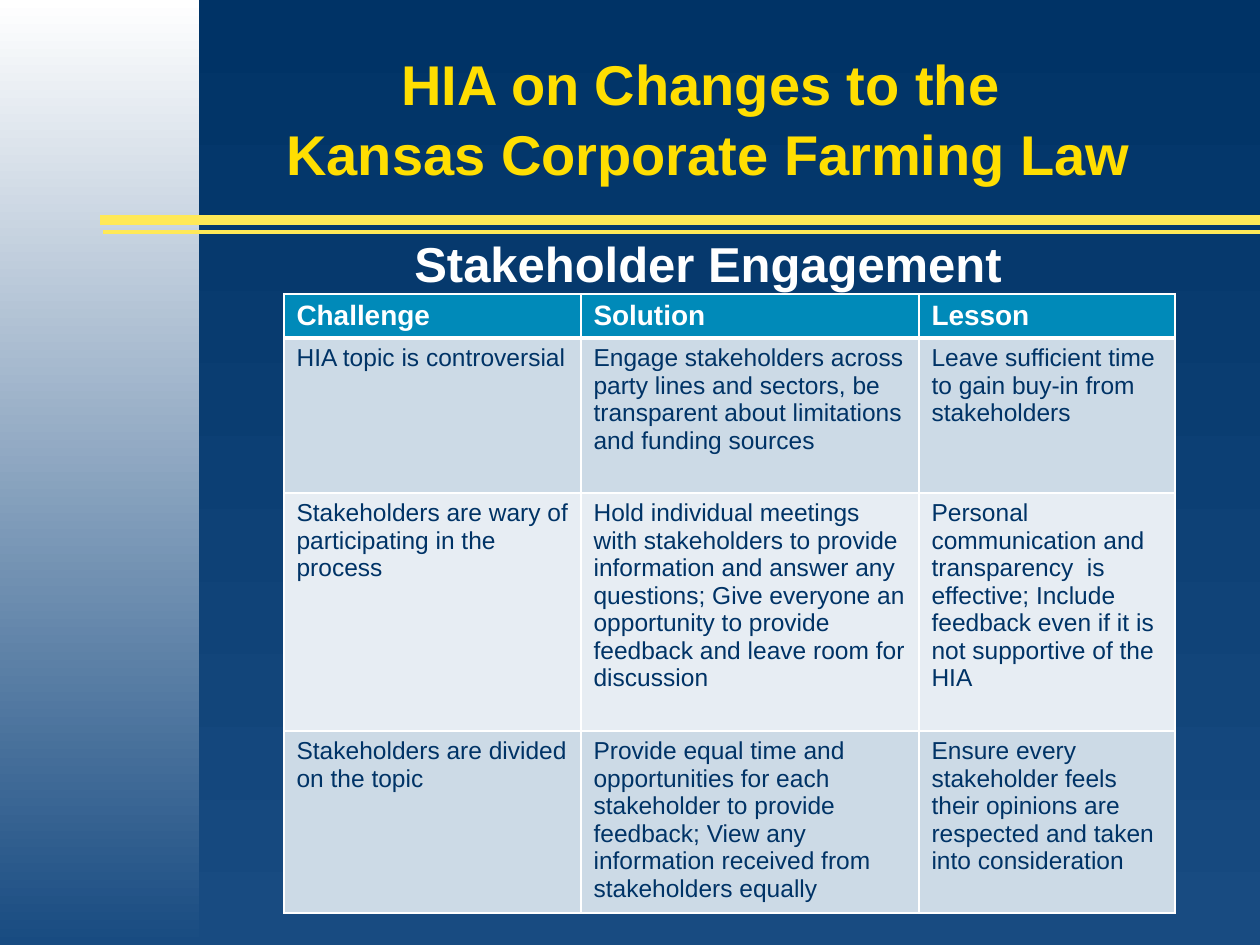
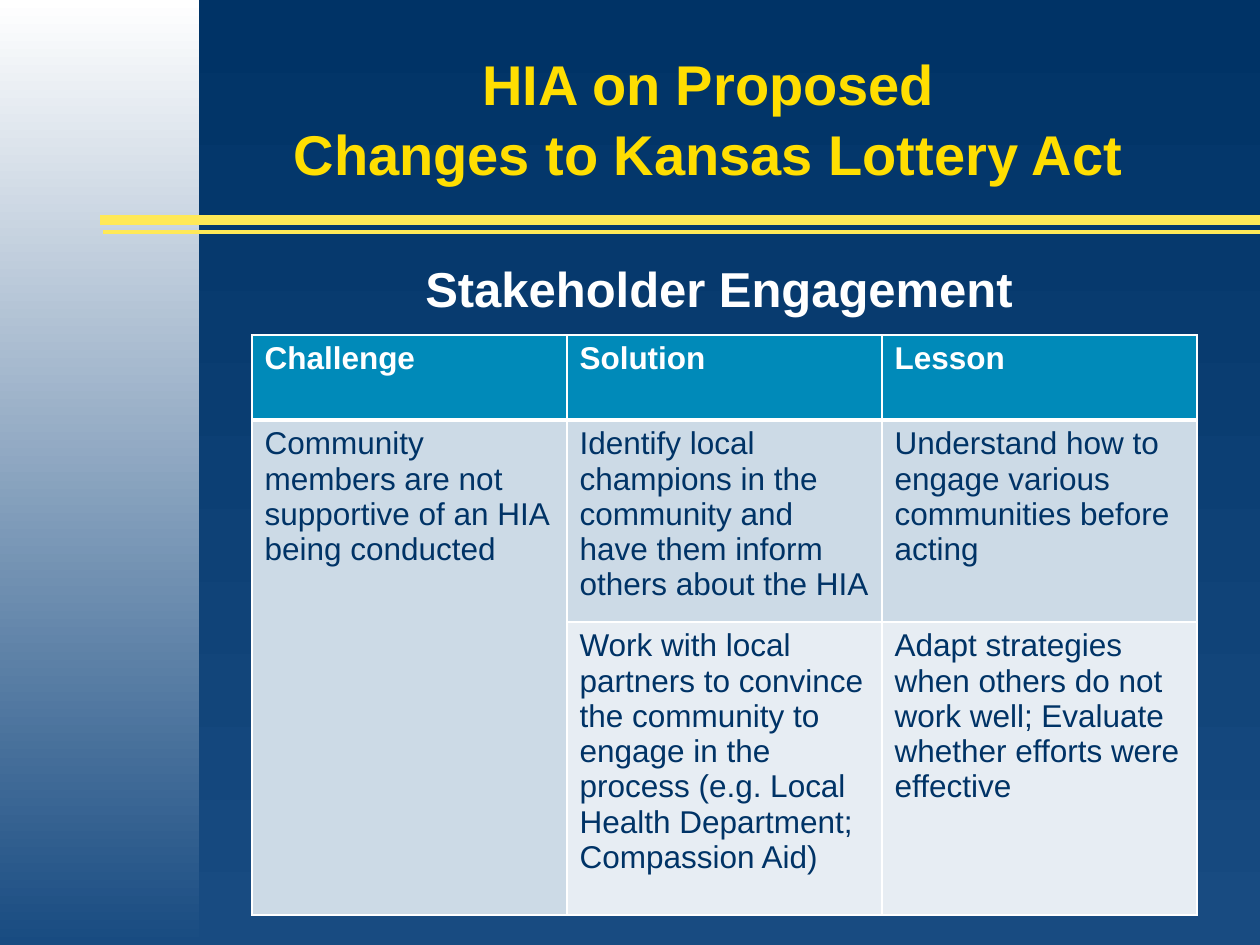
from dataclasses import dataclass

from lxml.etree import SubElement
from pptx import Presentation
from pptx.dml.color import RGBColor as Rgb
from pptx.enum.shapes import MSO_CONNECTOR as Link, MSO_SHAPE as Shape
from pptx.enum.text import MSO_ANCHOR as Anchor, MSO_AUTO_SIZE as Fit, PP_ALIGN as Align
from pptx.oxml.ns import qn
from pptx.util import Emu, Pt

WIDE, HIGH = 1260, 945
SCALE = 914400 / 126  # EMU in one px


@dataclass(frozen=True)
class Theme:
    font: str = "Arial"
    navy: str = "003366"
    blue: str = "184B81"
    white: str = "FFFFFF"
    gold: str = "FFDE01"
    rule: str = "FFE957"
    head: str = "008AB9"
    bands: tuple[str, str] = ("CCDAE6", "E7EDF3")
    title: int = 32
    label: int = 28
    grid: float = 1
    thick: float = 3


@dataclass(frozen=True)
class Box:
    left: int
    top: int
    width: int
    height: int

    def emu(self) -> tuple[Emu, ...]:
        return tuple(map(px, (self.left, self.top, self.width, self.height)))


@dataclass(frozen=True)
class Rule:
    y: int
    weight: float


@dataclass(frozen=True)
class Grid:
    left: int
    top: int
    cols: tuple[int, ...]
    rows: tuple[int, ...]
    head: int
    body: int
    cells: tuple[tuple[str, ...], ...]
    spans: tuple[tuple[int, int, int, int], ...] = ()


@dataclass(frozen=True)
class Page:
    title: tuple[str, ...]
    label: Box
    grid: Grid


THEME = Theme()
SIDE = Box(0, 0, 199, HIGH)
TITLE = Box(170, 25, 1077, 168)
RULES = (Rule(232, 2), Rule(220, 6))
RULE_LEFT = 105
LABEL = "Stakeholder Engagement"
HEADS = ("Challenge", "Solution", "Lesson")

PAGES = (
    Page(
        ("HIA on Changes to the ", "Kansas Corporate Farming Law"),
        Box(262, 227, 892, 72),
        Grid(
            284, 294, (297, 338, 256), (44, 155, 238, 182), 16, 14,
            (
                HEADS,
                (
                    "HIA topic is controversial",
                    "Engage stakeholders across party lines and sectors, be "
                    "transparent about limitations and funding sources",
                    "Leave sufficient time to gain buy-in from stakeholders",
                ),
                (
                    "Stakeholders are wary of participating in the process",
                    "Hold individual meetings with stakeholders to provide "
                    "information and answer any questions; Give everyone an "
                    "opportunity to provide feedback and leave room for discussion",
                    "Personal communication and transparency  is effective; "
                    "Include feedback even if it is not supportive of the HIA",
                ),
                (
                    "Stakeholders are divided on the topic",
                    "Provide equal time and opportunities for each stakeholder to "
                    "provide feedback; View any information received from "
                    "stakeholders equally",
                    "Ensure every stakeholder feels their opinions are respected "
                    "and taken into consideration",
                ),
            ),
        ),
    ),
    Page(
        ("HIA on Proposed", "Changes to Kansas Lottery Act"),
        Box(273, 252, 892, 72),
        Grid(
            252, 335, (315, 315, 315), (85, 202, 293), 18, 18,
            (
                HEADS,
                (
                    "Community members are not supportive of an HIA being conducted",
                    "Identify local champions in the community and have them "
                    "inform others about the HIA",
                    "Understand how to engage various communities before acting",
                ),
                (
                    "",
                    "Work with local partners to convince the community to engage "
                    "in the process (e.g. Local Health Department; Compassion Aid)",
                    "Adapt strategies when others do not work well; Evaluate "
                    "whether efforts were effective",
                ),
            ),
            ((1, 0, 2, 0),),
        ),
    ),
)


def px(count: int) -> Emu:
    return Emu(round(count * SCALE))


def tint(text: str) -> Rgb:
    return Rgb.from_string(text)


def fade(fill, top: str, base: str) -> None:
    """Fill with a gradient that runs straight down."""
    fill.gradient()
    fill.gradient_angle = 270
    for stop, tone in zip(fill.gradient_stops, (top, base)):
        stop.color.rgb = tint(tone)


def write(para, text: str, size: int, tone: str, bold: bool = True) -> None:
    run = para.add_run()
    run.text = text
    font = run.font
    font.name, font.size, font.bold = THEME.font, Pt(size), bold
    font.color.rgb = tint(tone)


def draw_side(slide) -> None:
    side = slide.shapes.add_shape(Shape.RECTANGLE, *SIDE.emu())
    side.shadow.inherit = False
    side.line.fill.background()
    fade(side.fill, THEME.white, THEME.blue)


def draw_rule(slide, rule: Rule) -> None:
    ends = map(px, (RULE_LEFT, rule.y, WIDE, rule.y))
    link = slide.shapes.add_connector(Link.STRAIGHT, *ends)
    link.line.width = Pt(rule.weight)
    link.line.color.rgb = tint(THEME.rule)
    link.line._get_or_add_ln().set("cap", "sq")
    SubElement(link._element.spPr, qn("a:effectLst"))


def draw_title(slide, lines: tuple[str, ...]) -> None:
    title = slide.shapes.title
    title.left, title.top, title.width, title.height = TITLE.emu()
    frame = title.text_frame
    frame.auto_size, frame.vertical_anchor = Fit.NONE, Anchor.BOTTOM
    for i, line in enumerate(lines):
        para = frame.add_paragraph() if i else frame.paragraphs[0]
        para.alignment = Align.CENTER
        if i:
            para.space_before = Pt(1.5)
        write(para, line, THEME.title, THEME.gold)


def draw_label(slide, box: Box) -> None:
    frame = slide.shapes.add_textbox(*box.emu()).text_frame
    frame.word_wrap, frame.auto_size = True, Fit.SHAPE_TO_FIT_TEXT
    para = frame.paragraphs[0]
    para.alignment = Align.CENTER
    write(para, LABEL, THEME.label, THEME.white)


def edge(cell, row: int) -> None:
    """Border a cell, with a heavy line between head and body."""
    props = cell._tc.get_or_add_tcPr()
    for side in "LRTB":
        heavy = (row, side) in ((0, "B"), (1, "T"))
        weight = THEME.thick if heavy else THEME.grid
        line = SubElement(props, qn(f"a:ln{side}"), w=str(Pt(weight)))
        fill = SubElement(line, qn("a:solidFill"))
        SubElement(fill, qn("a:srgbClr"), val=THEME.white)


def draw_grid(slide, grid: Grid) -> None:
    box = Box(grid.left, grid.top, sum(grid.cols), sum(grid.rows))
    table = slide.shapes.add_table(len(grid.rows), len(grid.cols), *box.emu()).table
    table.horz_banding = False
    for col, width in zip(table.columns, grid.cols):
        col.width = px(width)
    for r, texts in enumerate(grid.cells):
        table.rows[r].height = px(grid.rows[r])
        head = r == 0
        size, tone = (grid.head, THEME.white) if head else (grid.body, THEME.navy)
        for c, text in enumerate(texts):
            cell = table.cell(r, c)
            edge(cell, r)
            cell.fill.solid()
            cell.fill.fore_color.rgb = tint(THEME.head if head else THEME.bands[(r - 1) % 2])
            if text:
                write(cell.text_frame.paragraphs[0], text, size, tone, head)
    for top, left, low, right in grid.spans:
        table.cell(top, left).merge(table.cell(low, right))


def draw_page(deck, page: Page) -> None:
    slide = deck.slides.add_slide(deck.slide_layouts.get_by_name("Title Only"))
    draw_side(slide)
    for rule in RULES:
        draw_rule(slide, rule)
    draw_title(slide, page.title)
    draw_grid(slide, page.grid)
    draw_label(slide, page.label)


def main() -> None:
    deck = Presentation()
    deck.slide_width, deck.slide_height = px(WIDE), px(HIGH)
    fade(deck.slide_master.background.fill, THEME.navy, THEME.blue)
    for page in PAGES:
        draw_page(deck, page)
    deck.save("out.pptx")


if __name__ == "__main__":
    main()
